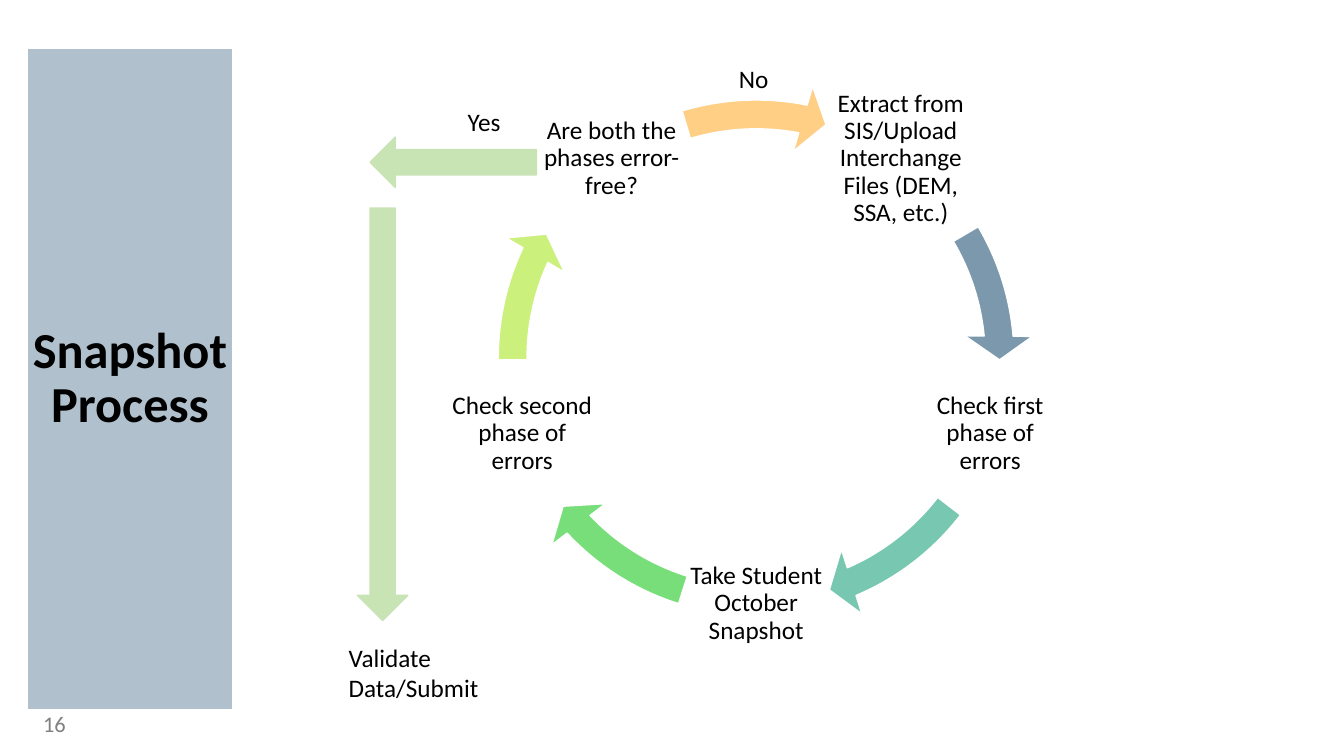
from math import cos, radians, sin

from pptx import Presentation
from pptx.dml.color import RGBColor
from pptx.enum.shapes import MSO_SHAPE as Preset
from pptx.enum.text import MSO_ANCHOR as Anchor, PP_ALIGN as Align
from pptx.util import Inches, Pt

COLORS = {
    "panel": "B0C1CD",
    "text": "000000",
    "number": "808080",
    "white": "FFFFFF",
    "extract": "7C98AC",
    "first": "78C7B0",
    "snapshot": "78DE79",
    "second": "CCF07C",
    "question": "FECF85",
    "exit": "C8E4B5",
}

STEPS = [
    ("Extract from SIS/Upload Interchange Files (DEM, SSA, etc.)", "extract", 212.93, 197.67),
    ("Check first phase of errors", "first", 40.14, 22.54),
    ("Take Student October Snapshot", "snapshot", 82.1, 64.5),
    ("Check second phase of errors", "second", 122.97, 107.71),
    ("Are both the phases error-free?", "question", 168.65, 151.99),
]


def color(name):
    return RGBColor.from_string(COLORS[name])


def add_filled(slide, preset, box, fill, line, line_width=1):
    shape = slide.shapes.add_shape(preset, *map(Inches, box))
    shape.shadow.inherit = False
    shape.fill.solid()
    shape.fill.fore_color.rgb = color(fill)
    shape.line.color.rgb = color(line)
    shape.line.width = Pt(line_width)
    return shape


def write(shape, text, size=18, ink="text", align=Align.LEFT, anchor=Anchor.TOP,
          inset=None, bold=False, spacing=None):
    frame = shape.text_frame
    frame.word_wrap = True
    frame.vertical_anchor = anchor
    if inset is not None:
        frame.margin_left = frame.margin_right = Inches(inset)
        frame.margin_top = frame.margin_bottom = Inches(inset)
    paragraph = frame.paragraphs[0]
    paragraph.text = text
    paragraph.alignment = align
    paragraph.line_spacing = spacing
    font = paragraph.font
    font.name = "Calibri"
    font.size = Pt(size)
    font.bold = bold
    font.color.rgb = color(ink)


def add_label(slide, box, text, **style):
    write(slide.shapes.add_textbox(*map(Inches, box)), text, **style)


def add_title_panel(slide, left, top, width, height):
    panel = add_filled(slide, Preset.RECTANGLE, (left, top, width, height),
                       "panel", "panel", 0.75)
    write(panel, "Snapshot Process", size=36, align=Align.CENTER,
          anchor=Anchor.MIDDLE, inset=0, bold=True, spacing=0.9)
    add_label(slide, (left + 0.05, top + height, 3, 0.4), "16",
              size=16, ink="number", spacing=0.9)


def add_cycle(slide, left, top, size):
    node_size, node_radius = 1.47, 2.44
    center_x, center_y = left + size / 2, top + size / 2
    for index, (text, fill, head_angle, tail_angle) in enumerate(STEPS):
        angle = radians(-54 + index * 360 / len(STEPS))
        node_left = center_x + node_radius * cos(angle) - node_size / 2
        node_top = center_y + node_radius * sin(angle) - node_size / 2
        add_label(slide, (node_left, node_top, node_size, node_size), text,
                  align=Align.CENTER, anchor=Anchor.MIDDLE, inset=0.03, spacing=0.9)
        arrow = add_filled(slide, Preset.CIRCULAR_ARROW, (left, top, size, size),
                           fill, "white")
        for position, value in enumerate((0.052, 3.36, head_angle, tail_angle, 0.061)):
            arrow.adjustments[position] = value
    add_label(slide, (left + 2.48, top - 0.22, 0.53, 0.4), "No")


def add_exit_path(slide, left, top):
    add_label(slide, (left + 1.18, top, 0.53, 0.4), "Yes")
    for box, rotation in (
        ((left + 0.31, top + 0.35, 1.65, 0.5), 180),
        ((left - 1.61, top + 2.85, 4.09, 0.5), 90),
    ):
        arrow = add_filled(slide, Preset.RIGHT_ARROW, box, "exit", "exit")
        arrow.rotation = rotation
    add_label(slide, (left, top + 5.31, 2.02, 0.71), "Validate Data/Submit")


def main():
    presentation = Presentation()
    presentation.slide_width = Inches(13.33)
    presentation.slide_height = Inches(7.5)
    slide = presentation.slides.add_slide(presentation.slide_layouts[6])
    add_title_panel(slide, 0.28, 0.49, 2.02, 6.54)
    add_cycle(slide, 4.75, 0.8, 5.5)
    add_exit_path(slide, 3.36, 1.01)
    presentation.save("out.pptx")


if __name__ == "__main__":
    main()
